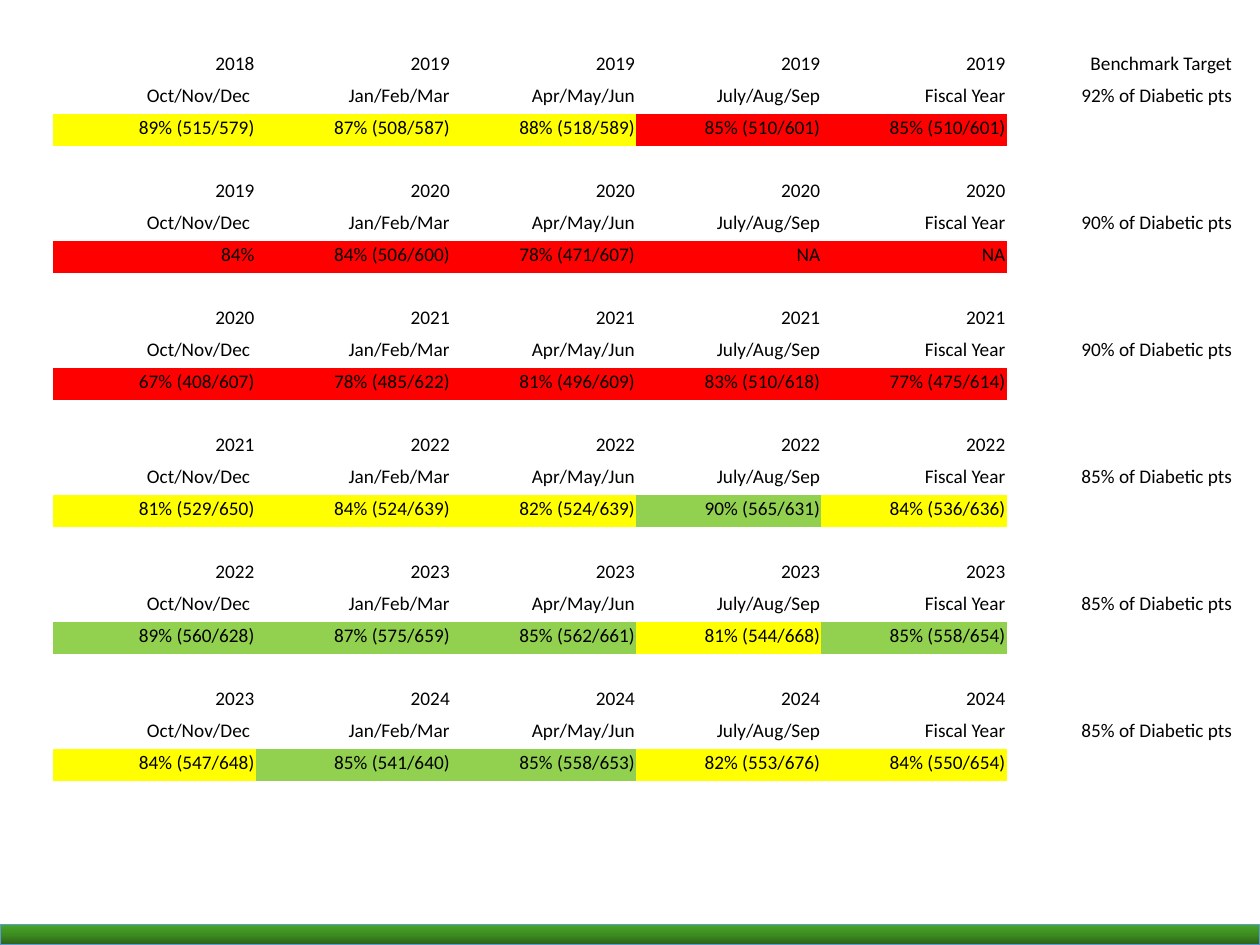
from copy import deepcopy

from pptx import Presentation
from pptx.dml.color import RGBColor
from pptx.enum.shapes import MSO_SHAPE
from pptx.enum.text import MSO_ANCHOR, PP_ALIGN
from pptx.oxml.ns import qn
from pptx.util import Inches, Pt

RECTANGLE = MSO_SHAPE.RECTANGLE
BOTTOM = MSO_ANCHOR.BOTTOM
RIGHT = PP_ALIGN.RIGHT
PLAIN_TABLE_STYLE = "{2D5ABB26-0587-4C30-8999-92F81FD0307C}"

COLORS = {
    "text": "000000",
    "Y": "FFFF00",
    "R": "FF0000",
    "G": "92D050",
    "bar_dark": "2B6217",
    "bar_middle": "3D8B21",
    "bar_light": "48A527",
    "bar_line": "5B9BD5",
}

COLUMN_WIDTHS = [1.61, 1.55, 1.47, 1.47, 1.47, 1.8]
PERIODS = ["Oct/Nov/Dec\N{NO-BREAK SPACE}", "Jan/Feb/Mar", "Apr/May/Jun",
           "July/Aug/Sep", "Fiscal Year"]

# First calendar year, target, rating of each period, results
FISCAL_YEARS = [
    (2018, "92%", "YYYRR", ["89% (515/579)", "87% (508/587)", "88% (518/589)",
                            "85% (510/601)", "85% (510/601)"]),
    (2019, "90%", "RRRRR", ["84%", "84% (506/600)", "78% (471/607)", "NA", "NA"]),
    (2020, "90%", "RRRRR", ["67% (408/607)", "78% (485/622)", "81% (496/609)",
                            "83% (510/618)", "77% (475/614)"]),
    (2021, "85%", "YYYGY", ["81% (529/650)", "84% (524/639)", "82% (524/639)",
                            "90% (565/631)", "84% (536/636)"]),
    (2022, "85%", "GGGYG", ["89% (560/628)", "87% (575/659)", "85% (562/661)",
                            "81% (544/668)", "85% (558/654)"]),
    (2023, "85%", "YGGYY", ["84% (547/648)", "85% (541/640)", "85% (558/653)",
                            "82% (553/676)", "84% (550/654)"]),
]


def color(name):
    return RGBColor.from_string(COLORS[name])


def write_text(paragraph, text, *, size, font, color_name, align):
    paragraph.alignment = align
    if not text:
        # Keeps an empty cell as low as a filled one
        paragraph._p.get_or_add_endParaRPr().set("sz", str(size * 100))
        return
    run = paragraph.add_run()
    run.text = text
    run.font.size = Pt(size)
    run.font.name = font
    run.font.color.rgb = color(color_name)


class SlideBuilder:
    def __init__(self, slide, font="Calibri", size=11):
        self.slide = slide
        self.font = font
        self.size = size

    def gradient_bar(self, left, top, width, height, stops, line):
        shape = self.slide.shapes.add_shape(
            RECTANGLE, Inches(left), Inches(top), Inches(width), Inches(height))
        shape.shadow.inherit = False
        shape.line.color.rgb = color(line)
        shape.line.width = Pt(0.5)
        shape.fill.gradient()
        shape.fill.gradient_angle = 90
        stop_list = shape._element.spPr.find(".//" + qn("a:gsLst"))
        while len(stop_list) < len(stops):
            stop_list.append(deepcopy(stop_list[-1]))
        for stop, (position, name) in zip(shape.fill.gradient_stops, stops):
            stop.position = position
            stop.color.rgb = color(name)

    def table(self, left, top, widths, height, rows):
        frame = self.slide.shapes.add_table(
            len(rows), len(widths), Inches(left), Inches(top),
            Inches(sum(widths)), Inches(height))
        table = frame.table
        table.first_row = table.horz_banding = False
        table._tbl.tblPr.find(qn("a:tableStyleId")).text = PLAIN_TABLE_STYLE
        for column, width in zip(table.columns, widths):
            column.width = Inches(width)
        for row, values in zip(table.rows, rows):
            row.height = Inches(height / len(rows))
            for cell, (text, fill) in zip(row.cells, values):
                self.cell(cell, text, fill)

    def cell(self, cell, text, fill):
        cell.margin_left = cell.margin_right = cell.margin_top = Inches(0.01)
        cell.margin_bottom = Inches(0.05)
        cell.vertical_anchor = BOTTOM
        if fill:
            cell.fill.solid()
            cell.fill.fore_color.rgb = color(fill)
        else:
            cell.fill.background()
        write_text(cell.text_frame.paragraphs[0], text, size=self.size,
                   font=self.font, color_name="text", align=RIGHT)


def plain(texts):
    return [(text, None) for text in texts]


def table_rows():
    rows = []
    for start, target, ratings, results in FISCAL_YEARS:
        if rows:
            rows.append(plain([""] * len(COLUMN_WIDTHS)))
        heading = "" if rows else "Benchmark Target"
        rows.append(plain([str(start)] + [str(start + 1)] * 4 + [heading]))
        rows.append(plain(PERIODS + [f"{target} of Diabetic pts"]))
        rows.append(list(zip(results, ratings)) + plain([""]))
    return rows


def main():
    presentation = Presentation()
    presentation.slide_width = Inches(10)
    presentation.slide_height = Inches(7.5)
    builder = SlideBuilder(
        presentation.slides.add_slide(presentation.slide_layouts[6]))

    # Footer bar
    builder.gradient_bar(
        0, 7.34, 10, 0.16,
        [(0, "bar_dark"), (0.5, "bar_middle"), (1, "bar_light")], "bar_line")

    # Quarterly results against the benchmark
    builder.table(0.42, 0.4, COLUMN_WIDTHS, 5.8, table_rows())

    presentation.save("out.pptx")


if __name__ == "__main__":
    main()
